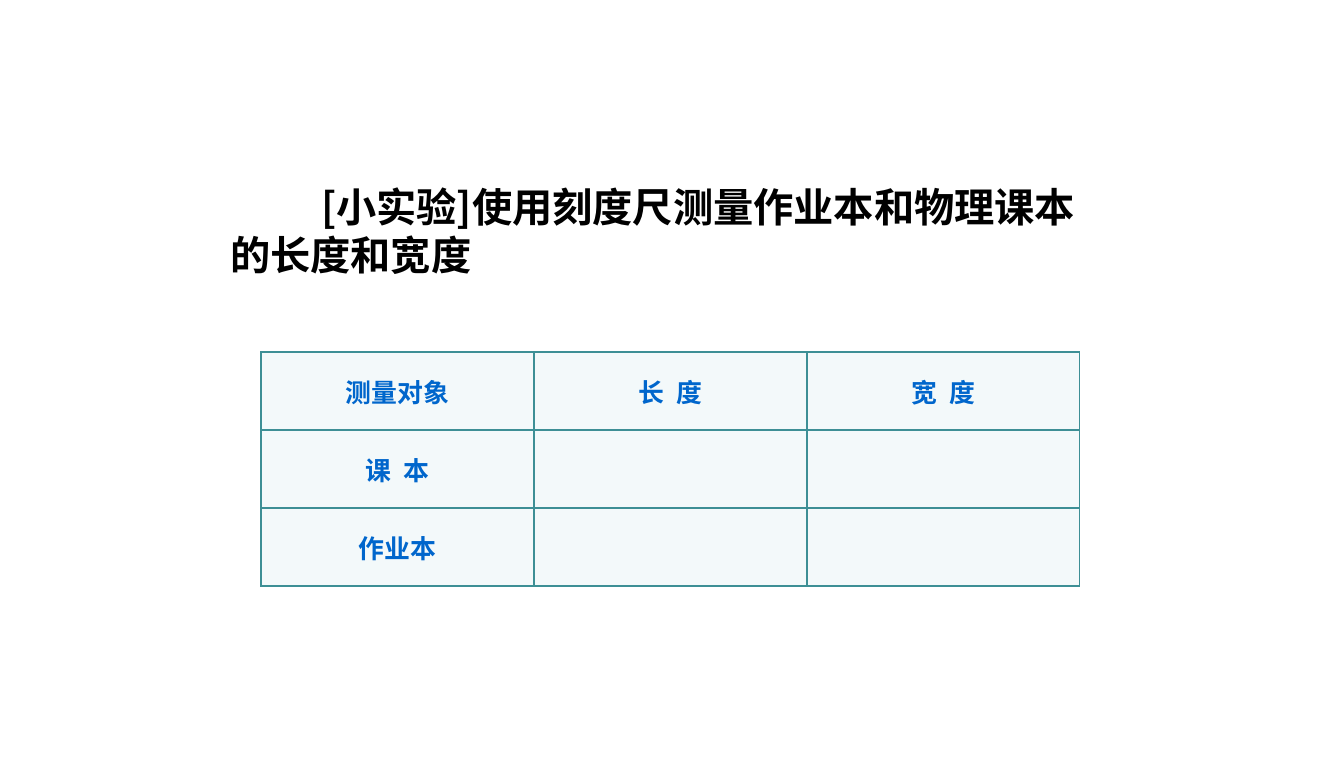
import pptx
import pptx.dml.color
import pptx.enum.text
import pptx.oxml
import pptx.oxml.ns
import pptx.util
from lxml import etree

SCALE = 8835  # EMU in one px
FONT = "Noto Sans CJK SC"
BLACK, BLUE, TEAL, PALE = "000000", "0066CC", "3D8F95", "F3F9FA"

TITLE = "[小实验]使用刻度尺测量作业本和物理课本的长度和宽度"
ROWS = [
    ["测量对象", "长 度", "宽 度"],
    ["课 本", "", ""],
    ["作业本", "", ""],
]


def px(num):
    return pptx.util.Emu(num * SCALE)


def hue(code):
    return pptx.dml.color.RGBColor.from_string(code)


def child(node, tag, **attrs):
    return etree.SubElement(node, pptx.oxml.ns.qn(tag), **attrs)


def style(par, size, code):
    for run in par.runs:
        font = run.font
        font.name, font.size, font.bold = FONT, pptx.util.Pt(size), True
        font.color.rgb = hue(code)
        child(run._r.get_or_add_rPr(), "a:ea", typeface=FONT)


def title(slide, text, x, y, w, h):
    frame = slide.shapes.add_textbox(px(x), px(y), px(w), px(h)).text_frame
    frame.word_wrap = True
    frame.auto_size = pptx.enum.text.MSO_AUTO_SIZE.SHAPE_TO_FIT_TEXT
    par = frame.paragraphs[0]
    par.text = text
    style(par, 28, BLACK)
    # First line indent
    par._p.get_or_add_pPr().set("indent", str(px(91)))


def edges(cell, code):
    props = cell._tc.get_or_add_tcPr()
    for spot, side in enumerate("LRTB"):
        line = pptx.oxml.parse_xml(
            f'<a:ln{side} {pptx.oxml.ns.nsdecls("a")} w="12700"><a:solidFill>'
            f'<a:srgbClr val="{code}"/></a:solidFill></a:ln{side}>')
        props.insert(spot, line)


def fill(cell, text):
    cell.fill.solid()
    cell.fill.fore_color.rgb = hue(PALE)
    edges(cell, TEAL)
    cell.vertical_anchor = pptx.enum.text.MSO_ANCHOR.MIDDLE
    if not text:
        return
    par = cell.text_frame.paragraphs[0]
    par.text = text
    par.alignment = pptx.enum.text.PP_ALIGN.CENTER
    par.space_before = pptx.util.Pt(3.6)
    style(par, 18, BLUE)
    # Widen the gap in two-character labels
    if " " in text:
        par.runs[0]._r.get_or_add_rPr().set("spc", "200")


def grid(slide, rows, x, y, wide, high):
    down, across = len(rows), len(rows[0])
    table = slide.shapes.add_table(
        down, across, px(x), px(y), px(wide * across), px(high * down)).table
    table.first_row = table.horz_banding = False
    for r, row in enumerate(rows):
        for c, text in enumerate(row):
            fill(table.cell(r, c), text)


def main():
    deck = pptx.Presentation()
    deck.slide_width, deck.slide_height = px(1344), px(774)
    slide = deck.slides.add_slide(deck.slide_layouts[6])

    # Task heading
    title(slide, TITLE, 220, 177, 874, 108)

    # Table for the readings
    grid(slide, ROWS, 261, 352, 273, 78)

    deck.save("out.pptx")


if __name__ == "__main__":
    main()
